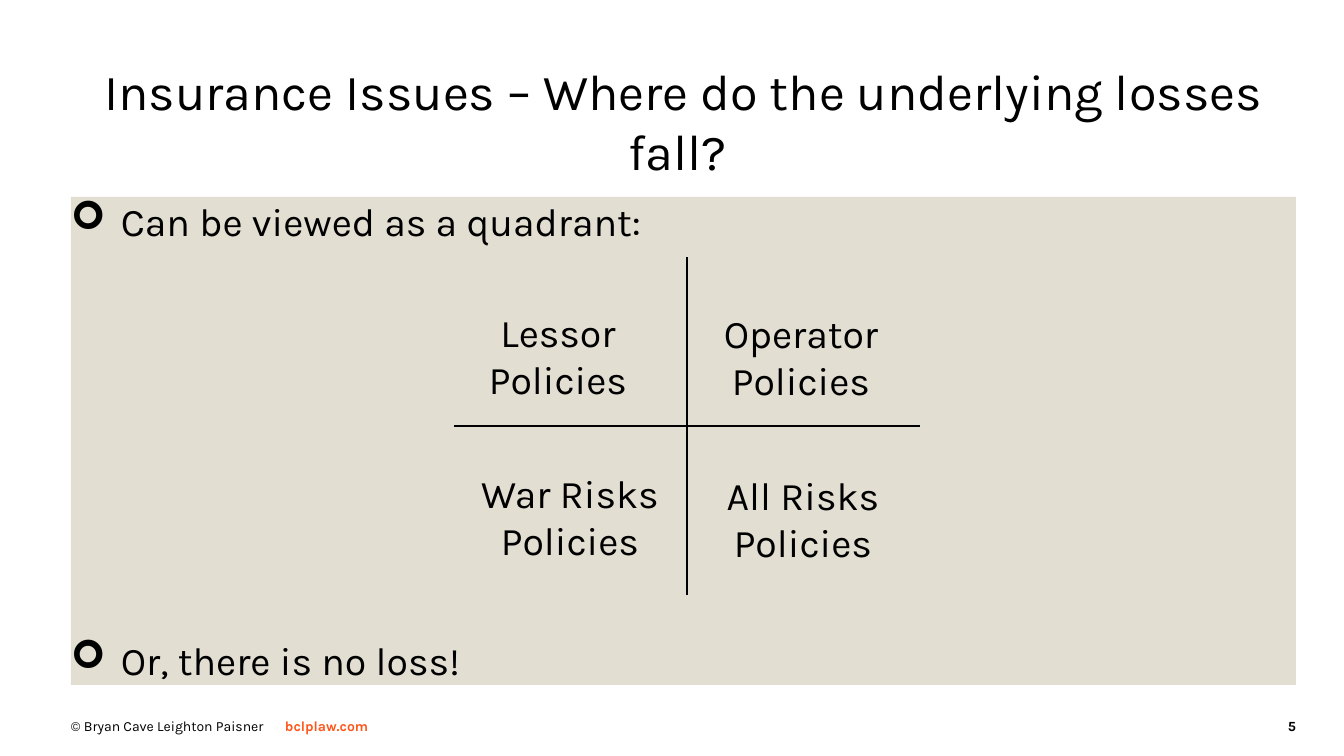
from lxml.etree import SubElement
from pptx import Presentation
from pptx.dml.color import RGBColor
from pptx.enum.shapes import MSO_CONNECTOR, MSO_SHAPE
from pptx.enum.text import MSO_ANCHOR, PP_ALIGN
from pptx.oxml.ns import qn
from pptx.util import Pt

SCALE = 914400 / 100.8
FONT = "Karla"
COLORS = {"ink": "000000", "panel": "E2DED2", "accent": "FF5519"}


def px(n):
    return round(n * SCALE)


def color(name):
    return RGBColor.from_string(COLORS[name])


def setup(frame):
    frame.word_wrap = True
    frame.vertical_anchor = MSO_ANCHOR.TOP
    frame.margin_left = frame.margin_right = 0
    frame.margin_top = frame.margin_bottom = 0


def add_run(para, text, size, tint="ink", bold=False):
    run = para.add_run()
    run.text = text
    run.font.name = FONT
    run.font.size = Pt(size)
    run.font.bold = bold
    run.font.color.rgb = color(tint)


def add_text(slide, box, text, size, align=PP_ALIGN.LEFT, tint="ink", bold=False):
    frame = slide.shapes.add_textbox(*map(px, box)).text_frame
    setup(frame)
    para = frame.paragraphs[0]
    para.alignment = align
    add_run(para, text, size, tint, bold)


def add_line(slide, *ends):
    line = slide.shapes.add_connector(MSO_CONNECTOR.STRAIGHT, *map(px, ends))
    line.line.color.rgb = color("ink")
    line.line.width = Pt(1)
    SubElement(line._element.spPr, qn("a:effectLst"))


def add_bullet(para, text, gap):
    props = para._p.get_or_add_pPr()
    props.set("marL", str(px(50)))
    props.set("indent", str(px(-50)))
    para.alignment = PP_ALIGN.LEFT
    para.space_before = Pt(gap)
    SubElement(props, qn("a:buFont")).set("typeface", "Wingdings")
    SubElement(props, qn("a:buChar")).set("char", "➢")
    add_run(para, text, 28)


def add_panel(slide, box):
    panel = slide.shapes.add_shape(MSO_SHAPE.RECTANGLE, *map(px, box))
    panel.shadow.inherit = False
    panel.fill.solid()
    panel.fill.fore_color.rgb = color("panel")
    panel.line.fill.background()
    frame = panel.text_frame
    setup(frame)
    add_bullet(frame.paragraphs[0], "Can be viewed as a quadrant:", 0)
    add_bullet(frame.add_paragraph(), "Or, there is no loss!", 280)


def add_quad(slide, box):
    left, top, width, height = box
    mid_x, mid_y = left + width // 2, top + height // 2
    add_line(slide, mid_x, top, mid_x, top + height)
    add_line(slide, left + width, mid_y, left, mid_y)
    labels = [
        ("Lessor Policies", 4, 51),
        ("Operator Policies", 247, 52),
        ("War Risks Policies", 16, 212),
        ("All Risks Policies", 249, 214),
    ]
    for text, x, y in labels:
        add_text(slide, (left + x, top + y, 200, 84), text, 28, PP_ALIGN.CENTER)


def add_footer(slide, box):
    left, top, width, height = box
    add_text(slide, (left, top, 214, height), "© Bryan Cave Leighton Paisner", 10)
    add_text(slide, (left + 214, top, 214, height), "bclplaw.com", 10,
             tint="accent", bold=True)
    add_text(slide, (left + width - 60, top, 60, height), "5", 10,
             PP_ALIGN.RIGHT, bold=True)


def main():
    deck = Presentation()
    deck.slide_width, deck.slide_height = px(1344), px(756)
    slide = deck.slides.add_slide(deck.slide_layouts[6])
    add_text(slide, (71, 60, 1225, 137),
             "Insurance Issues – Where do the underlying losses fall? ",
             36, PP_ALIGN.CENTER)
    add_panel(slide, (71, 197, 1225, 488))
    add_quad(slide, (454, 257, 466, 338))
    add_footer(slide, (71, 718, 1225, 38))
    deck.save("out.pptx")


if __name__ == "__main__":
    main()
